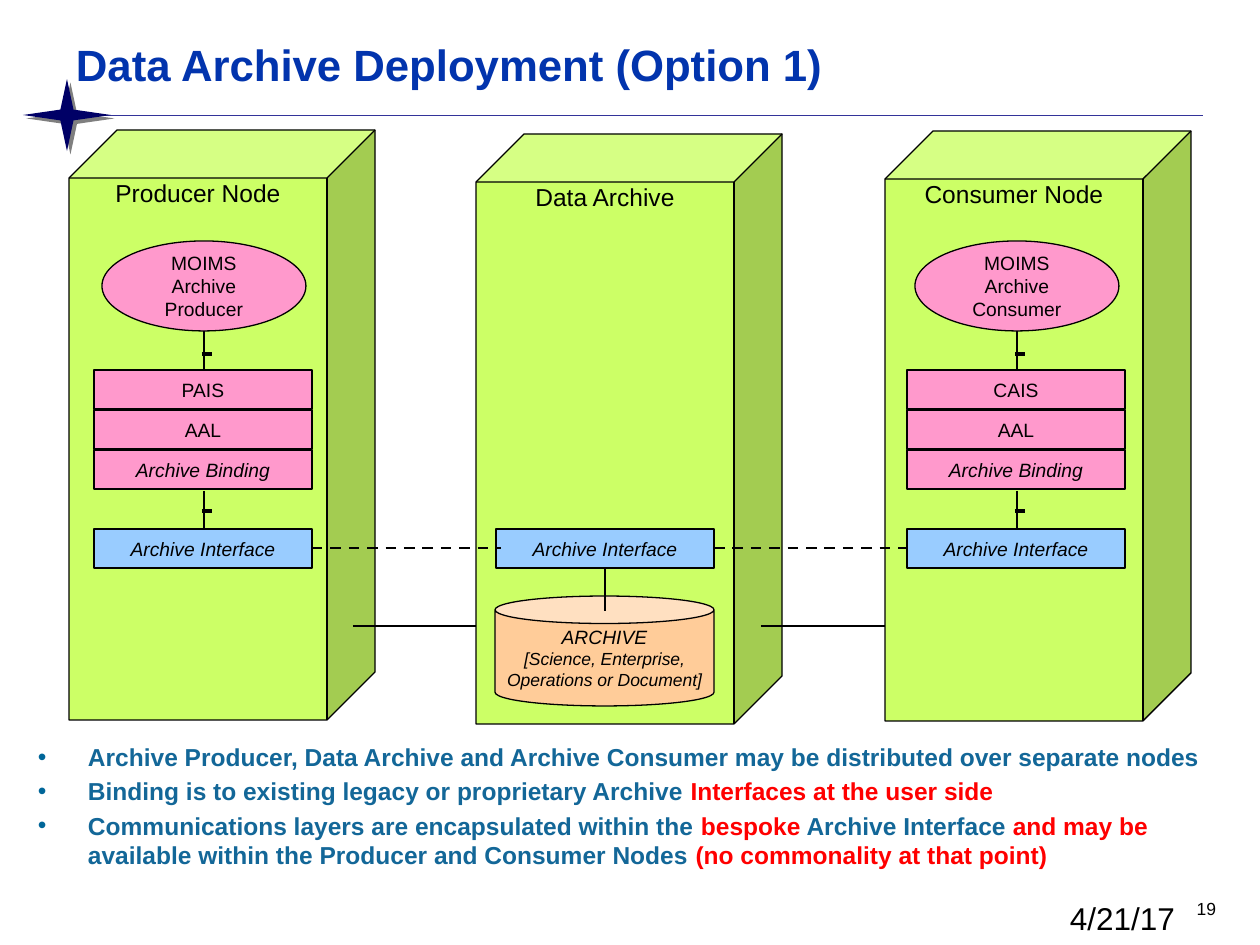
import pptx
import pptx.util
import pptx.dml.color
import pptx.enum.dml
import pptx.enum.shapes
import pptx.enum.text
import pptx.oxml
import pptx.oxml.ns

SHAPE = pptx.enum.shapes.MSO_SHAPE
ALIGN = pptx.enum.text.PP_ALIGN
ANCHOR = pptx.enum.text.MSO_ANCHOR
Pt = pptx.util.Pt

THEME = {
    "font": "Arial",
    "color": {"ink": "000000", "title": "0234AD", "body": "136798", "bullet": "006699",
              "alert": "FF0000", "node": "CCFF66", "layer": "FF99CC", "interface": "99CCFF",
              "store": "FFCC99", "star": "000066", "rule": "333399"},
    "size": {"title": 25, "date": 18, "body": 14, "node": 14, "label": 11, "detail": 10},
    "line": {"hair": 0.13, "outline": 0.75, "link": 1.5, "tick": 2.25},
}

# Content
TITLE = "Data Archive Deployment (Option 1)"
DATE, PAGE = "4/21/17", "19"
NODES = [("Producer Node", 69, 130), ("Data Archive", 476, 134), ("Consumer Node", 885, 131)]
STACKS = [(94, "Archive Producer", "PAIS"), (907, "Archive Consumer", "CAIS")]
SHARED_LAYERS = [("AAL", False), ("Archive Binding", True)]
INTERFACE = "Archive Interface"
STORE = [("ARCHIVE", "label"), ("[Science, Enterprise, Operations or Document]", "detail")]
BULLETS = [
    [("Archive Producer, Data Archive and Archive Consumer may be distributed over separate nodes",
      "body")],
    [("Binding is to existing legacy or proprietary Archive ", "body"),
     ("Interfaces at the user side", "alert")],
    [("Communications layers are encapsulated within the ", "body"), ("bespoke", "alert"),
     (" Archive Interface ", "body"), ("and may be ", "alert"),
     ("available within the Producer and Consumer Nodes ", "body"),
     ("(no commonality at that point)", "alert")],
]

# Layout in px
SLIDE_W, SLIDE_H = 1260, 945
NODE_W, NODE_H = 306, 590
BOX_W, BOX_H, LAYER_TOP, LAYER_STEP, INTERFACE_TOP = 218, 39, 370, 40, 529
ARCHIVE_X = 496
STEM_SPANS = [(331, 370), (491, 528)]
TICK_YS = [354, 511]


def px(value):
    return round(value * 914400 / 126)


def rgb(name):
    return pptx.dml.color.RGBColor.from_string(THEME["color"][name])


def apply(target, values):
    for name, value in values.items():
        setattr(target, name, value)


def write(frame, paragraphs, size, align=ALIGN.LEFT, anchor=ANCHOR.TOP, inset=(13, 6, 13, 6),
          wrap=True, spacing=None, **font):
    """Each paragraph is a list of (text, colour, size) runs; size may be None."""
    left, top, right, bottom = map(px, inset)
    apply(frame, {"word_wrap": wrap, "vertical_anchor": anchor, "margin_left": left,
                  "margin_top": top, "margin_right": right, "margin_bottom": bottom})
    for index, runs in enumerate(paragraphs):
        paragraph = frame.paragraphs[0] if index == 0 else frame.add_paragraph()
        apply(paragraph, {"alignment": align, "line_spacing": spacing})
        for text, color, own_size in runs:
            run = paragraph.add_run()
            run.text = text
            apply(run.font, {"name": THEME["font"],
                             "size": Pt(THEME["size"][own_size or size]), **font})
            run.font.color.rgb = rgb(color)


def add_text(box, paragraphs, size, **options):
    frame = slide.shapes.add_textbox(*map(px, box)).text_frame
    write(frame, paragraphs, size, **options)
    return frame


def add_part(kind, box, fill, lines=(), size="label", inset=(3, 3, 3, 3),
             anchor=ANCHOR.MIDDLE, **options):
    part = slide.shapes.add_shape(kind, *map(px, box))
    part.shadow.inherit = False
    part.fill.solid()
    part.fill.fore_color.rgb = rgb(fill)
    part.line.color.rgb = rgb("ink")
    part.line.width = Pt(THEME["line"]["outline"])
    write(part.text_frame, [[(text, "ink", own)] for text, own in lines], size,
          align=ALIGN.CENTER, anchor=anchor, inset=inset, **options)
    return part


def add_line(x1, y1, x2, y2, weight="link", color="ink", dash=None):
    line = slide.shapes.add_connector(pptx.enum.shapes.MSO_CONNECTOR.STRAIGHT,
                                      *map(px, (x1, y1, x2, y2)))
    line.line.color.rgb = rgb(color)
    apply(line.line, {"width": Pt(THEME["line"][weight]), "dash_style": dash})
    line._element.spPr.append(pptx.oxml.parse_xml(
        f'<a:effectLst {pptx.oxml.ns.nsdecls("a")}/>'))


def add_box(x, y, fill, text, italic=False):
    add_part(SHAPE.RECTANGLE, (x, y, BOX_W, BOX_H), fill, [(text, None)], italic=italic)


def add_bullet(paragraph):
    paragraph.space_before = Pt(2.8)
    props = paragraph._p.get_or_add_pPr()
    props.set("marL", str(px(50)))
    props.set("indent", str(px(-50)))
    ns = pptx.oxml.ns.nsdecls("a")
    for xml in (f'<a:buClr {ns}><a:srgbClr val="{THEME["color"]["bullet"]}"/></a:buClr>',
                f'<a:buFont {ns} typeface="{THEME["font"]}"/>',
                f'<a:buChar {ns} char="•"/>'):
        props.append(pptx.oxml.parse_xml(xml))


deck = pptx.Presentation()
apply(deck, {"slide_width": px(SLIDE_W), "slide_height": px(SLIDE_H)})
slide = deck.slides.add_slide(deck.slide_layouts[6])

# Header rule and star
add_line(67, 115, 1203, 115, "hair", "rule")
star = add_part(SHAPE.STAR_4_POINT, (23, 79, 88, 72), "star")
star.adjustments[0] = 0.106
star.line.fill.background()
star._element.spPr.find(pptx.oxml.ns.qn("a:effectLst")).append(pptx.oxml.parse_xml(
    f'<a:outerShdw {pptx.oxml.ns.nsdecls("a")} dist="35560" dir="2700000" algn="ctr">'
    '<a:srgbClr val="000000"><a:alpha val="50000"/></a:srgbClr></a:outerShdw>'))

# Title, date and page number
add_text((63, 38, 1134, 78), [[(TITLE, "title", None)]], "title", spacing=0.9, bold=True)
add_text((1057, 893, 139, 40), [[(DATE, "ink", None)]], "date")
add_text((935, 892, 294, 32), [[(PAGE, "ink", None)]], "detail", align=ALIGN.RIGHT)

# Nodes
for name, x, y in NODES:
    node = add_part(SHAPE.CUBE, (x, y, NODE_W, NODE_H), "node", [(name, None)], "node",
                    inset=(13, 0, 13, 0), anchor=ANCHOR.TOP, wrap=False)
    node.adjustments[0] = 0.157

# Producer and consumer stacks
for x, role, service in STACKS:
    add_part(SHAPE.OVAL, (x + 8, 241, 204, 90), "layer", [("MOIMS", None), (role, None)],
             inset=(0, 6, 0, 6))
    for row, (layer, italic) in enumerate([(service, False)] + SHARED_LAYERS):
        add_box(x, LAYER_TOP + row * LAYER_STEP, "layer", layer, italic)
    add_box(x, INTERFACE_TOP, "interface", INTERFACE, True)
    for top, bottom in STEM_SPANS:
        add_line(x + 110, top, x + 110, bottom)
    for y in TICK_YS:
        add_line(x + 108, y, x + 118, y, "tick")

# Archive store and its interface
add_part(SHAPE.CAN, (495, 596, 219, 110), "store", STORE, italic=True)
add_box(ARCHIVE_X, INTERFACE_TOP, "interface", INTERFACE, True)
add_line(605, 568, 605, 611)

# Links between nodes
for start, end in [(312, 501), (714, 907)]:
    add_line(start, 548, end, 548, dash=pptx.enum.dml.MSO_LINE.DASH)
for start, end in [(353, 476), (761, 885)]:
    add_line(start, 626, end, 626)

# Notes under the diagram
points = add_text((25, 736, 1221, 139),
                  [[(text, color, None) for text, color in runs] for runs in BULLETS],
                  "body", bold=True)
for paragraph in points.paragraphs:
    add_bullet(paragraph)

deck.save("out.pptx")
